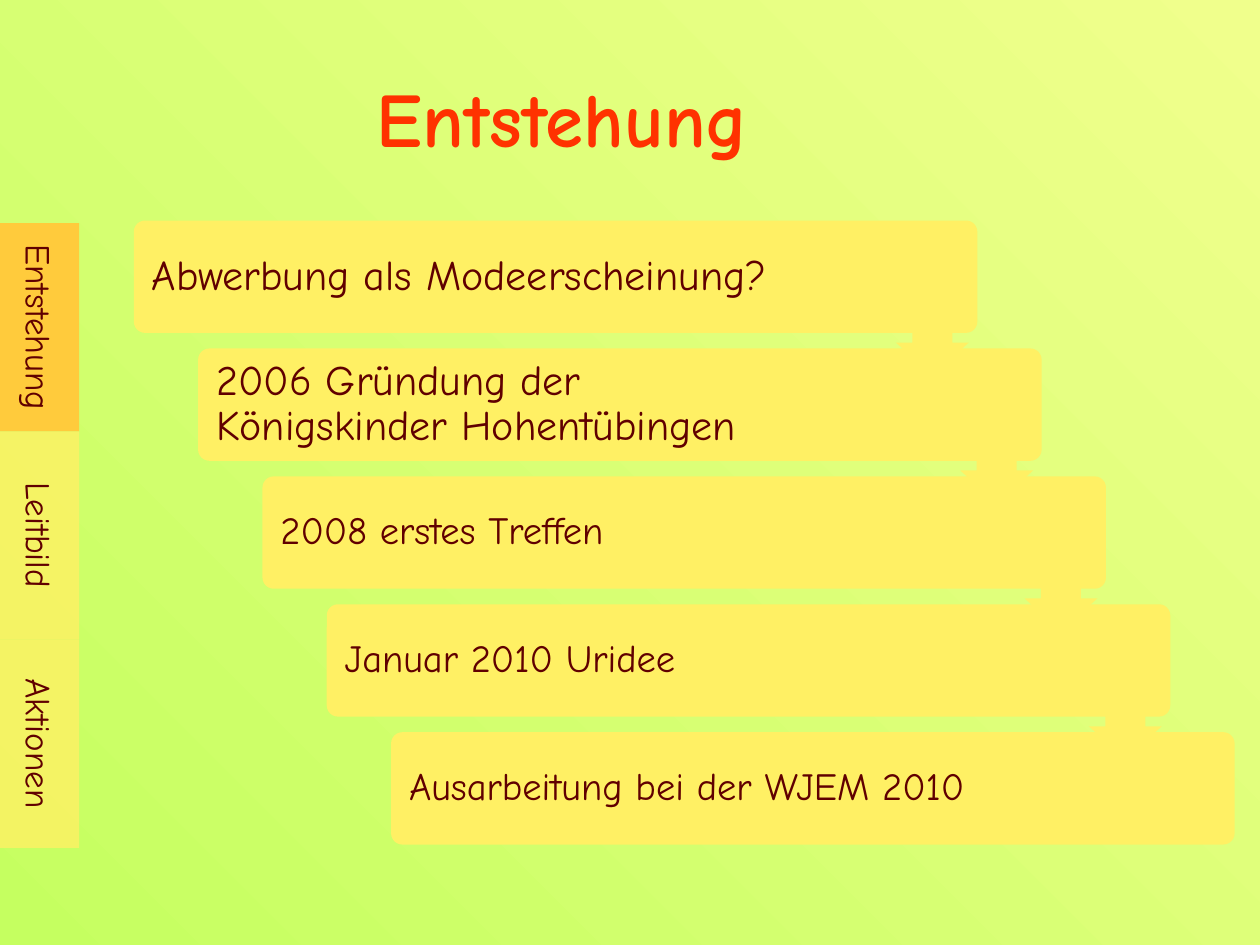
from lxml.etree import SubElement
from pptx import Presentation
from pptx.dml.color import RGBColor
from pptx.enum.shapes import MSO_SHAPE
from pptx.enum.text import MSO_ANCHOR, PP_ALIGN
from pptx.oxml.ns import qn
from pptx.util import Pt

# Content
TITLE = "Entstehung"
TABS = [("Entstehung", "FFCB3C", 100), ("Leitbild", "FFF064", 80), ("Aktionen", "FFF064", 80)]
STEPS = [
    ("Abwerbung als Modeerscheinung?", 24),
    ("2006 Gründung der \vKönigskinder Hohentübingen", 24),
    ("2008 erstes Treffen", 22),
    ("Januar 2010 Uridee", 22),
    ("Ausarbeitung bei der WJEM 2010", 22),
]

# Style and layout, in points
FONT = "Comic Neue"
DARK, RED, YELLOW = "600000", "FF3200", "FFF064"
BACKGROUND = ("C5FF60", "F0FF8C")
TAB_TOP, TAB_WIDTH, TAB_HEIGHT = 127.5, 45.3, 119
BAR_LEFT, BAR_TOP, BAR_WIDTH, BAR_HEIGHT = 76.5, 126, 482, 64.2
STEP_X, STEP_Y = 36.75, 73.1
ARROW_LEFT, ARROW_TOP, ARROW_SIZE = 512, 172.9, 41.6


def color(hex_string):
    return RGBColor.from_string(hex_string)


def write(shape, text, size, text_color, alignment, bold=False):
    frame = shape.text_frame
    frame.word_wrap = True
    frame.vertical_anchor = MSO_ANCHOR.MIDDLE
    paragraph = frame.paragraphs[0]
    paragraph.text = text
    paragraph.alignment = alignment
    for run in paragraph.runs:
        run.font.name = FONT
        run.font.size = Pt(size)
        run.font.bold = bold
        run.font.color.rgb = color(text_color)
    return paragraph


def add_block(slide, kind, left, top, width, height, fill_color, opacity=100):
    shape = slide.shapes.add_shape(kind, Pt(left), Pt(top), Pt(width), Pt(height))
    shape.shadow.inherit = False
    shape.line.fill.background()
    shape.fill.solid()
    shape.fill.fore_color.rgb = color(fill_color)
    if opacity < 100:
        tint = shape._element.spPr.find(qn("a:solidFill"))[0]
        SubElement(tint, qn("a:alpha")).set("val", str(opacity * 1000))
    return shape


def add_tab(slide, index, text, fill_color, opacity):
    tab = add_block(slide, MSO_SHAPE.RECTANGLE, 0, TAB_TOP + index * TAB_HEIGHT,
                    TAB_WIDTH, TAB_HEIGHT, fill_color, opacity)
    write(tab, text, 20, DARK, PP_ALIGN.CENTER)
    tab._element.txBody.bodyPr.set("vert", "vert")


def add_bar(slide, index, text, size):
    bar = add_block(slide, MSO_SHAPE.ROUNDED_RECTANGLE, BAR_LEFT + index * STEP_X,
                    BAR_TOP + index * STEP_Y, BAR_WIDTH, BAR_HEIGHT, YELLOW)
    bar.adjustments[0] = 0.1
    write(bar, text, size, DARK, PP_ALIGN.LEFT).line_spacing = 0.9
    frame = bar.text_frame
    frame.margin_left = frame.margin_top = frame.margin_bottom = Pt(8.4)
    frame.margin_right = Pt(87 if index else 81)


def add_arrow(slide, index):
    arrow = add_block(slide, MSO_SHAPE.DOWN_ARROW, ARROW_LEFT + index * STEP_X,
                      ARROW_TOP + index * STEP_Y, ARROW_SIZE, ARROW_SIZE, YELLOW)
    arrow.adjustments[0] = 0.55
    arrow.adjustments[1] = 0.45


def main():
    presentation = Presentation()
    presentation.slide_width, presentation.slide_height = Pt(720), Pt(540)
    slide = presentation.slides.add_slide(presentation.slide_layouts[5])

    # Background gradient
    fill = slide.background.fill
    fill.gradient()
    fill.gradient_angle = 45
    for stop, hex_string, position in zip(fill.gradient_stops, BACKGROUND, (0, 1)):
        stop.color.rgb = color(hex_string)
        stop.position = position

    # Title
    title = slide.shapes.title
    title.left, title.top, title.width, title.height = Pt(45), Pt(21.6), Pt(553), Pt(90)
    write(title, TITLE, 44, RED, PP_ALIGN.CENTER, bold=True)

    # Navigation tabs
    for index, (text, fill_color, opacity) in enumerate(TABS):
        add_tab(slide, index, text, fill_color, opacity)

    # Staircase of steps, joined by arrows
    for index, (text, size) in enumerate(STEPS):
        add_bar(slide, index, text, size)
    for index in range(len(STEPS) - 1):
        add_arrow(slide, index)

    presentation.save("out.pptx")


if __name__ == "__main__":
    main()
